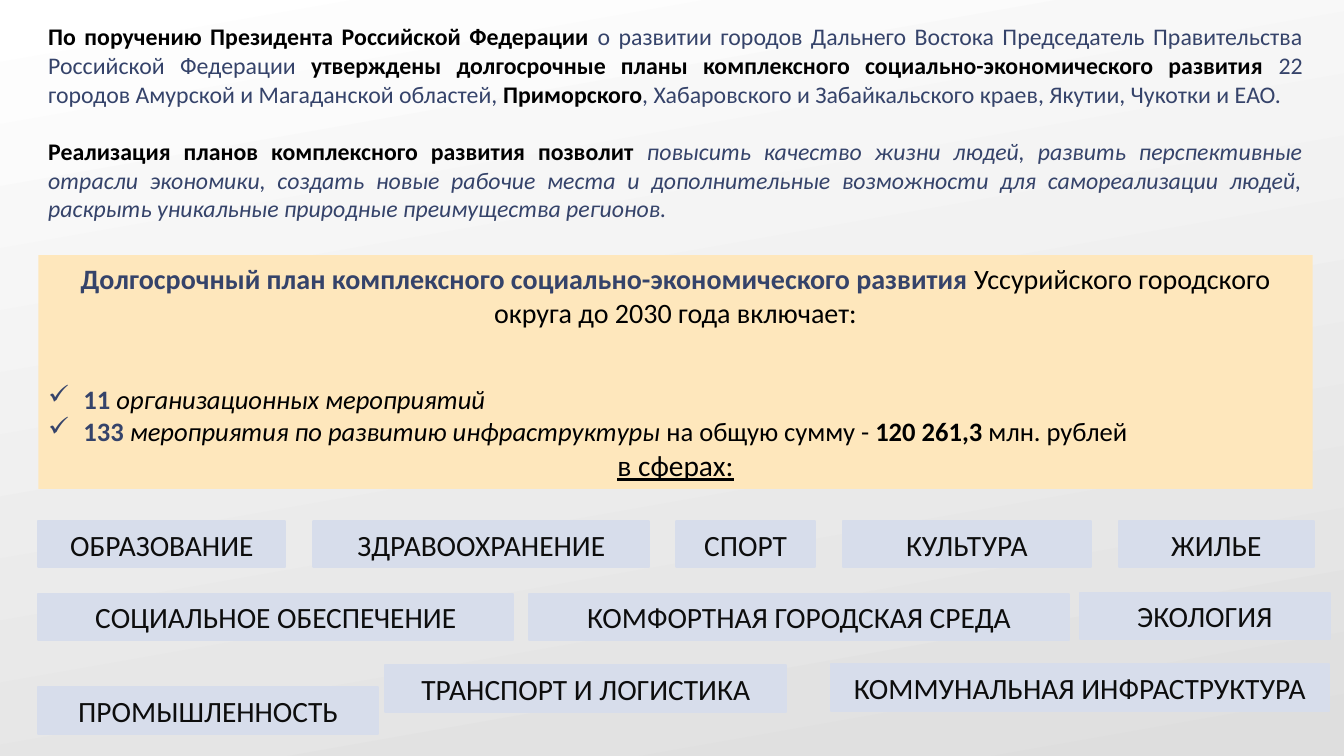
from lxml.etree import SubElement
from pptx import Presentation
from pptx.dml.color import RGBColor
from pptx.enum.shapes import MSO_SHAPE
from pptx.enum.text import MSO_ANCHOR, PP_ALIGN
from pptx.oxml.ns import qn
from pptx.util import Inches, Pt

COLORS = {
    "white": "FFFFFF",
    "gray": "DEDEDE",
    "cream": "FEE7BC",
    "pale_blue": "D7DDEB",
    "navy": "35436A",
    "black": "000000",
    "ink": "0D0D0D",
}

SPHERES = [
    ("ОБРАЗОВАНИЕ", 0.38, 5.17, 2.45),
    ("ЗДРАВООХРАНЕНИЕ", 3.11, 5.17, 3.33),
    ("СПОРТ", 6.71, 5.17, 1.37),
    ("КУЛЬТУРА", 8.36, 5.17, 2.46),
    ("ЖИЛЬЕ", 11.1, 5.17, 1.93),
    ("СОЦИАЛЬНОЕ ОБЕСПЕЧЕНИЕ", 0.38, 5.89, 4.71),
    ("КОМФОРТНАЯ ГОРОДСКАЯ СРЕДА", 5.25, 5.89, 5.35),
    ("ЭКОЛОГИЯ", 10.71, 5.88, 2.48),
    ("ПРОМЫШЛЕННОСТЬ", 0.38, 6.82, 3.37),
    ("ТРАНСПОРТ И ЛОГИСТИКА", 3.82, 6.6, 3.98),
    ("КОММУНАЛЬНАЯ ИНФРАСТРУКТУРА", 8.24, 6.59, 4.94),
]


def color(name):
    return RGBColor.from_string(COLORS[name])


def set_background(slide):
    fill = slide.background.fill
    fill.gradient()
    fill.gradient_angle = 280
    for stop, position, name in zip(fill.gradient_stops, (0, 1), ("white", "gray")):
        stop.position = position
        stop.color.rgb = color(name)


def add_run(paragraph, text, size=17, fill="black", bold=False, italic=False, underline=False):
    run = paragraph.add_run()
    run.text = text
    font = run.font
    font.name = "Calibri"
    font.size = Pt(size)
    font.color.rgb = color(fill)
    font.bold = bold
    font.italic = italic
    font.underline = underline


def add_paragraph(frame, align, space_before=0):
    first = frame.paragraphs[0]
    paragraph = frame.add_paragraph() if first.runs else first
    paragraph.alignment = align
    if space_before:
        paragraph.space_before = Pt(space_before)
    return paragraph


def add_check_mark(paragraph):
    properties = paragraph._p.get_or_add_pPr()
    properties.set("marL", str(Inches(0.35)))
    properties.set("indent", str(-Inches(0.35)))
    bullet_color = SubElement(properties, qn("a:buClr"))
    SubElement(bullet_color, qn("a:srgbClr"), val=COLORS["navy"])
    SubElement(properties, qn("a:buChar"), char="✓")


def add_rectangle(slide, left, top, width, height, fill, outlined=False):
    shape = slide.shapes.add_shape(
        MSO_SHAPE.RECTANGLE, Inches(left), Inches(top), Inches(width), Inches(height)
    )
    shape.shadow.inherit = False
    shape.fill.solid()
    shape.fill.fore_color.rgb = color(fill)
    if outlined:
        shape.line.color.rgb = color(fill)
        shape.line.width = Pt(1.5)
    else:
        shape.line.fill.background()
    shape.text_frame.word_wrap = True
    shape.text_frame.vertical_anchor = MSO_ANCHOR.MIDDLE
    return shape.text_frame


def add_plan_panel(slide):
    frame = add_rectangle(slide, 0.38, 2.53, 12.64, 2.32, "cream")
    title = add_paragraph(frame, PP_ALIGN.CENTER)
    add_run(title, "Долгосрочный план комплексного социально-экономического развития",
            size=20, fill="navy", bold=True)
    add_run(title, " Уссурийского городского округа до 2030 года включает:", size=20)

    organizational = add_paragraph(frame, PP_ALIGN.LEFT, space_before=39)
    add_check_mark(organizational)
    add_run(organizational, "11 ", size=19, fill="navy", bold=True)
    add_run(organizational, "организационных мероприятий", size=19, italic=True)

    infrastructure = add_paragraph(frame, PP_ALIGN.LEFT)
    add_check_mark(infrastructure)
    add_run(infrastructure, "133 ", size=19, fill="navy", bold=True)
    add_run(infrastructure, "мероприятия по развитию инфраструктуры ", size=19, italic=True)
    add_run(infrastructure, "на общую сумму - ", size=19)
    add_run(infrastructure, "120 261,3 ", size=19, bold=True)
    add_run(infrastructure, "млн. рублей", size=19)

    spheres = add_paragraph(frame, PP_ALIGN.CENTER)
    add_run(spheres, "в сферах:", size=21, underline=True)


def add_introduction(slide):
    box = slide.shapes.add_textbox(Inches(0.38), Inches(0.17), Inches(12.64), Inches(2.37))
    frame = box.text_frame
    frame.word_wrap = True
    order = add_paragraph(frame, PP_ALIGN.JUSTIFY)
    add_run(order, "По поручению Президента Российской Федерации ", bold=True)
    add_run(order, "о развитии городов Дальнего Востока Председатель Правительства "
            "Российской Федерации ", fill="navy")
    add_run(order, "утверждены долгосрочные планы комплексного "
            "социально-экономического развития ", bold=True)
    add_run(order, "22 городов Амурской и Магаданской областей, ", fill="navy")
    add_run(order, "Приморского", bold=True)
    add_run(order, ", Хабаровского и Забайкальского краев, Якутии, Чукотки и ЕАО.", fill="navy")

    outcome = add_paragraph(frame, PP_ALIGN.JUSTIFY, space_before=20.75)
    add_run(outcome, "Реализация планов комплексного развития позволит ", bold=True)
    add_run(outcome, "повысить качество жизни людей, развить перспективные отрасли экономики, "
            "создать новые рабочие места и дополнительные возможности для самореализации людей, "
            "раскрыть уникальные природные преимущества регионов.", fill="navy", italic=True)


def add_sphere(slide, name, left, top, width):
    frame = add_rectangle(slide, left, top, width, 0.46, "pale_blue", outlined=True)
    add_run(add_paragraph(frame, PP_ALIGN.CENTER), name, size=21, fill="ink")


def main():
    presentation = Presentation()
    presentation.slide_width = Inches(13.33)
    presentation.slide_height = Inches(7.5)
    slide = presentation.slides.add_slide(presentation.slide_layouts[6])
    set_background(slide)
    add_plan_panel(slide)
    add_introduction(slide)
    for sphere in SPHERES:
        add_sphere(slide, *sphere)
    presentation.save("out.pptx")


if __name__ == "__main__":
    main()
